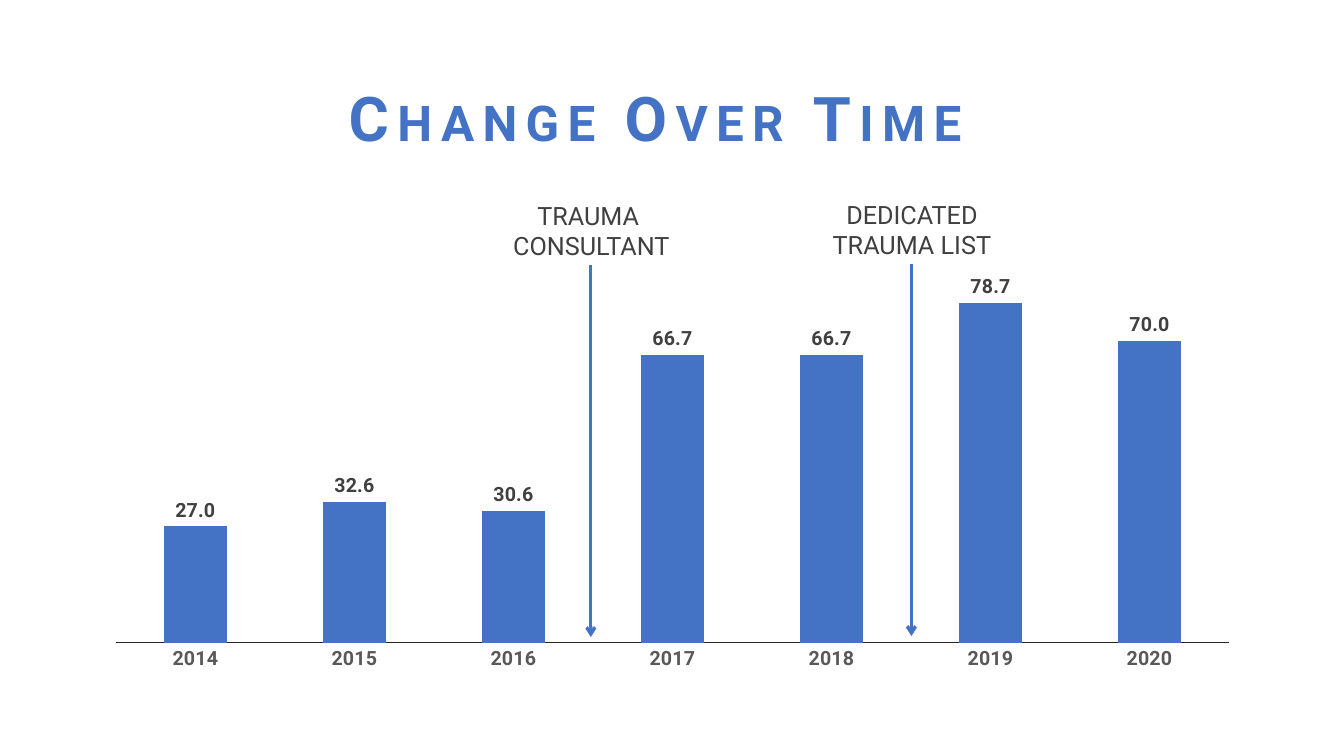
from lxml.etree import SubElement
from pptx import Presentation
from pptx.chart.data import CategoryChartData
from pptx.dml.color import RGBColor
from pptx.enum.chart import XL_CHART_TYPE as ChartType, XL_LABEL_POSITION as LabelPos
from pptx.enum.chart import XL_TICK_LABEL_POSITION as TickLabelPos, XL_TICK_MARK as TickMark
from pptx.enum.shapes import MSO_CONNECTOR as Connector
from pptx.enum.text import MSO_AUTO_SIZE as AutoSize, PP_ALIGN as Align
from pptx.oxml import parse_xml
from pptx.oxml.ns import nsdecls, qn
from pptx.util import Inches, Pt

FONT = "Roboto"
BLUE, DARK, GREY, BLACK = "4472C4", "404040", "595959", "262626"
YEARS = ["2014", "2015", "2016", "2017", "2018", "2019", "2020"]
VALUES = [27.0, 32.6, 30.6, 66.7, 66.7, 78.7, 70.0]
# Left and top of each event's label, and its wording
EVENTS = [
    (4.74, 1.94, "TRAUMA \vCONSULTANT"),
    (7.92, 1.93, "DEDICATED TRAUMA LIST"),
]


def rgb(color):
    return RGBColor.from_string(color)


def set_font(font, size, color, bold=False):
    font.name, font.size, font.bold = FONT, Pt(size), bold
    font.color.rgb = rgb(color)


def add_text(shapes, x, y, w, h, text, size, color, bold=False):
    """Add a centred text box and return its paragraph."""
    tf = shapes.add_textbox(Inches(x), Inches(y), Inches(w), Inches(h)).text_frame
    tf.word_wrap = True
    tf.auto_size = AutoSize.SHAPE_TO_FIT_TEXT
    p = tf.paragraphs[0]
    p.text = text
    p.alignment = Align.CENTER
    set_font(p.font, size, color, bold)
    return p


def add_title(slide):
    p = add_text(slide.shapes, 3.36, 0.74, 6.62, 0.84, "Change Over Time", 44, BLUE, True)
    rPr = p.runs[0]._r.get_or_add_rPr()
    rPr.set("cap", "small")
    rPr.set("spc", "600")


def add_arrow(shapes, x, top, bottom):
    line = shapes.add_connector(Connector.STRAIGHT, Inches(x), Inches(top), Inches(x), Inches(bottom))
    line.line.color.rgb = rgb(BLUE)
    line.line.width = Pt(2.25)
    SubElement(line.line._get_or_add_ln(), qn("a:tailEnd"), type="arrow")
    SubElement(line._element.spPr, qn("a:effectLst"))


def add_event(slide, x, y, text):
    """Add a label with an arrow down to the time axis, as one group."""
    shapes = slide.shapes.add_group_shape().shapes
    add_text(shapes, x, y, 2.25, 0.71, text, 18, DARK)
    add_arrow(shapes, x + 1.12, y + 0.69, y + 4.38)


def set_plot_layout(chart, **fractions):
    """Fix the inner plot area as fractions of the chart's size."""
    places = "".join(f'<c:{k} val="{v}"/>' for k, v in fractions.items())
    plot_area = chart._chartSpace.chart.plotArea
    for old in plot_area.findall(qn("c:layout")):
        plot_area.remove(old)
    plot_area.insert(0, parse_xml(
        f'<c:layout {nsdecls("c")}><c:manualLayout><c:layoutTarget val="inner"/>'
        f'<c:xMode val="edge"/><c:yMode val="edge"/>{places}</c:manualLayout></c:layout>'))


def style_axes(chart):
    years = chart.category_axis
    years.major_tick_mark = years.minor_tick_mark = TickMark.NONE
    years.has_major_gridlines = False
    years.format.line.color.rgb = rgb(BLACK)
    years.format.line.width = Pt(0.75)
    set_font(years.tick_labels.font, 14, GREY, True)

    scale = chart.value_axis
    scale.minimum_scale, scale.maximum_scale, scale.major_unit = 0, 100, 50
    scale.has_major_gridlines = False
    scale.tick_label_position = TickLabelPos.NONE
    scale.visible = False


def add_column_chart(slide):
    data = CategoryChartData(number_format="0.0")
    data.categories = YEARS
    data.add_series("Series 1", VALUES)
    chart = slide.shapes.add_chart(
        ChartType.COLUMN_CLUSTERED, Inches(0.92), Inches(2), Inches(11.5), Inches(4.76), data).chart
    chart.has_legend = chart.has_title = False
    set_font(chart.font, 14, DARK)
    style_axes(chart)
    set_plot_layout(chart, x=0.02, y=0.02, w=0.96, h=0.9)

    plot = chart.plots[0]
    plot.gap_width = 150
    plot.vary_by_categories = False
    series = plot.series[0]
    series.format.fill.solid()
    series.format.fill.fore_color.rgb = rgb(BLUE)
    labels = series.data_labels
    labels.show_value = True
    labels.position = LabelPos.OUTSIDE_END
    labels.number_format, labels.number_format_is_linked = "0.0", False
    set_font(labels.font, 14, DARK, True)


def main():
    prs = Presentation()
    prs.slide_width, prs.slide_height = Inches(13.33), Inches(7.5)
    slide = prs.slides.add_slide(prs.slide_layouts[6])
    add_column_chart(slide)
    add_title(slide)
    for event in EVENTS:
        add_event(slide, *event)
    prs.save("out.pptx")


if __name__ == "__main__":
    main()
